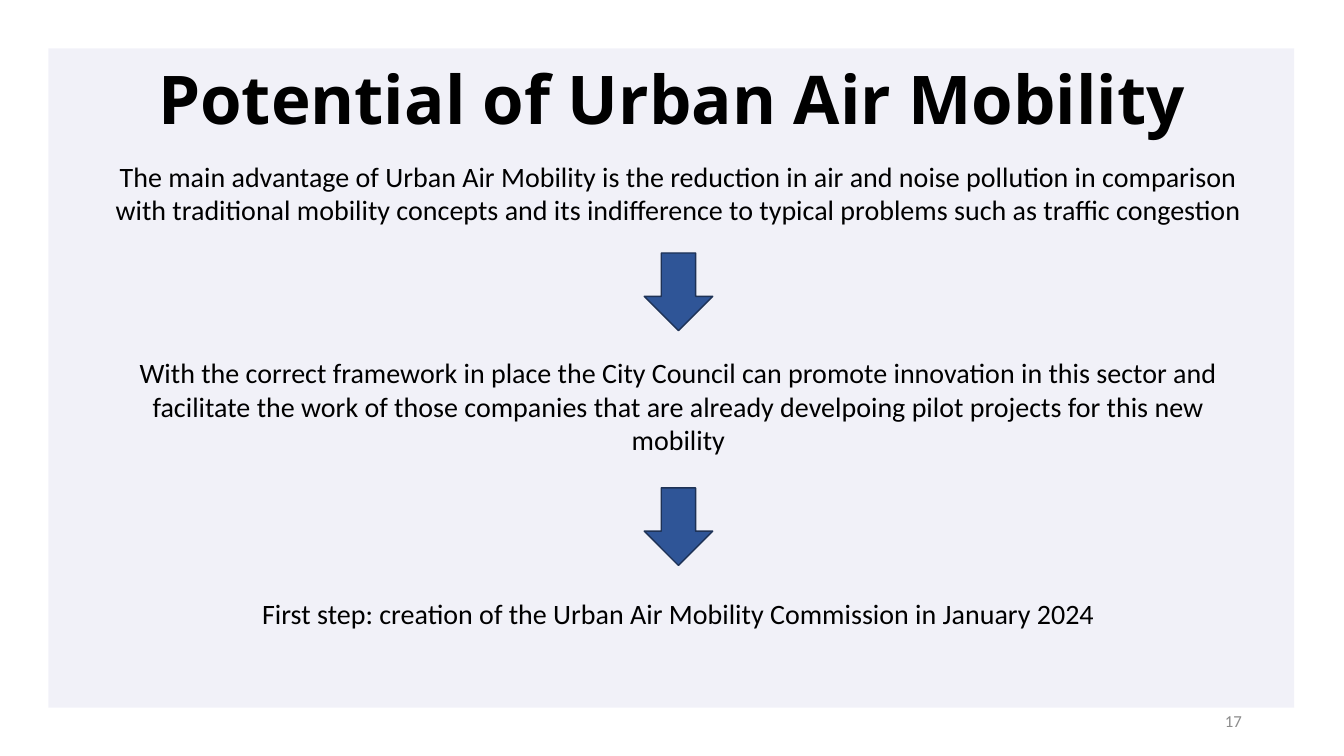
"""Build the slide on the potential of Urban Air Mobility."""
from dataclasses import dataclass

import lxml.etree
import pptx
import pptx.dml.color
import pptx.enum.shapes
import pptx.enum.text
import pptx.oxml.ns
import pptx.shapes.autoshape
import pptx.slide
import pptx.util

SLIDE_WIDTH = pptx.util.Inches(13.333)
SLIDE_HEIGHT = pptx.util.Inches(7.5)
ALIGN = pptx.enum.text.PP_ALIGN
ANCHOR = pptx.enum.text.MSO_ANCHOR
AUTO_SIZE = pptx.enum.text.MSO_AUTO_SIZE
PRESET = pptx.enum.shapes.MSO_SHAPE


@dataclass(frozen=True)
class Area:
    """Left, top, width and height in percent of the slide's size."""
    left: float
    top: float
    width: float
    height: float

    def lengths(self) -> tuple[int, int, int, int]:
        """Return the area in slide units."""
        return (
            int(SLIDE_WIDTH * self.left / 100),
            int(SLIDE_HEIGHT * self.top / 100),
            int(SLIDE_WIDTH * self.width / 100),
            int(SLIDE_HEIGHT * self.height / 100),
        )


@dataclass(frozen=True)
class Label:
    """A text box holding one paragraph."""
    area: Area
    text: str
    size: float = 20
    font: str = "Calibri"
    color: str = "000000"
    bold: bool = False
    align: ALIGN = ALIGN.CENTER
    anchor: ANCHOR = ANCHOR.TOP
    auto_size: AUTO_SIZE = AUTO_SIZE.SHAPE_TO_FIT_TEXT
    line_spacing: float = 1.0
    inset: float | None = None


@dataclass(frozen=True)
class Figure:
    """A filled preset shape."""
    preset: PRESET
    area: Area
    fill: str
    opacity: int = 100
    line: str | None = None


def body(top: float, height: float, text: str) -> Label:
    """Return a step of the argument in the shared text column."""
    return Label(Area(7.05, top, 86.85, height), text)


def arrow(top: float) -> Figure:
    """Return an arrow centred under the text column."""
    return Figure(PRESET.DOWN_ARROW, Area(47.93, top, 5.1, 10.27), "2F5597", line="1E3256")


PANEL = Figure(PRESET.RECTANGLE, Area(3.6, 6.4, 92.7, 87.2), "E4E5F3", opacity=50)
ARROWS = [arrow(33.47), arrow(64.53)]
LABELS = [
    Label(Area(6.08, 7.07, 87.83, 12.93), "Potential of Urban Air Mobility", size=48,
          font="Open Sans", bold=True, anchor=ANCHOR.MIDDLE, line_spacing=0.9, inset=0.12),
    body(20.4, 10.27, "The main advantage of Urban Air Mobility is the reduction in air and noise "
         "pollution in comparison with traditional mobility concepts and its indifference to "
         "typical problems such as traffic congestion"),
    body(46.4, 14.8, "With the correct framework in place the City Council can promote innovation "
         "in this sector and facilitate the work of those companies that are already develpoing "
         "pilot projects for this new mobility"),
    body(78.27, 5.87, "First step: creation of the Urban Air Mobility Commission in January 2024"),
    Label(Area(70.65, 92.67, 22.5, 5.33), "17", size=12, color="8C8C8C", align=ALIGN.RIGHT,
          anchor=ANCHOR.MIDDLE, auto_size=AUTO_SIZE.NONE),
]


def set_color(target: pptx.dml.color.ColorFormat, color: str) -> None:
    """Apply a hex colour."""
    target.rgb = pptx.dml.color.RGBColor.from_string(color)


def apply(target: object, values: dict[str, object]) -> None:
    """Set attributes from a dict of format values."""
    for name, value in values.items():
        setattr(target, name, value)


def set_opacity(shape: pptx.shapes.autoshape.Shape, percent: int) -> None:
    """Make a solid fill partly transparent."""
    qn = pptx.oxml.ns.qn
    color = shape.element.spPr.find(qn("a:solidFill")).find(qn("a:srgbClr"))
    lxml.etree.SubElement(color, qn("a:alpha"), val=str(percent * 1000))


def draw_figure(slide: pptx.slide.Slide, figure: Figure) -> None:
    """Draw a preset shape."""
    shape = slide.shapes.add_shape(figure.preset, *figure.area.lengths())
    shape.shadow.inherit = False
    shape.fill.solid()
    set_color(shape.fill.fore_color, figure.fill)
    if figure.opacity < 100:
        set_opacity(shape, figure.opacity)
    if figure.line is None:
        shape.line.fill.background()
    else:
        set_color(shape.line.color, figure.line)
        shape.line.width = pptx.util.Pt(1)


def draw_label(slide: pptx.slide.Slide, label: Label) -> None:
    """Draw a text box."""
    frame = slide.shapes.add_textbox(*label.area.lengths()).text_frame
    apply(frame, {"word_wrap": True, "auto_size": label.auto_size,
                  "vertical_anchor": label.anchor})
    if label.inset is not None:
        sides = ("left", "top", "right", "bottom")
        apply(frame, {f"margin_{side}": pptx.util.Inches(label.inset) for side in sides})
    paragraph = frame.paragraphs[0]
    apply(paragraph, {"alignment": label.align, "line_spacing": label.line_spacing})
    run = paragraph.add_run()
    run.text = label.text
    apply(run.font, {"name": label.font, "size": pptx.util.Pt(label.size), "bold": label.bold})
    set_color(run.font.color, label.color)


def main() -> None:
    """Build and save the presentation."""
    presentation = pptx.Presentation()
    apply(presentation, {"slide_width": SLIDE_WIDTH, "slide_height": SLIDE_HEIGHT})
    slide = presentation.slides.add_slide(presentation.slide_layouts[6])
    for figure in [PANEL, *ARROWS]:
        draw_figure(slide, figure)
    for label in LABELS:
        draw_label(slide, label)
    presentation.save("out.pptx")


if __name__ == "__main__":
    main()
